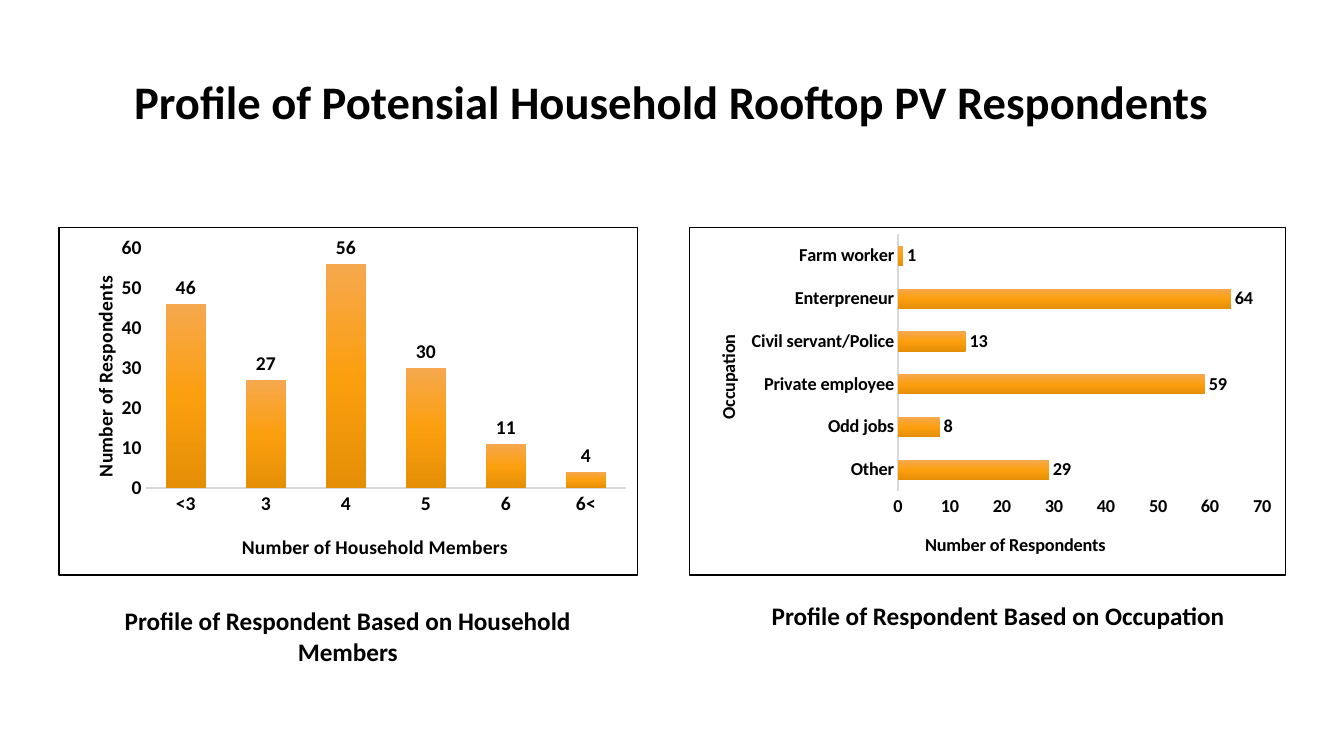
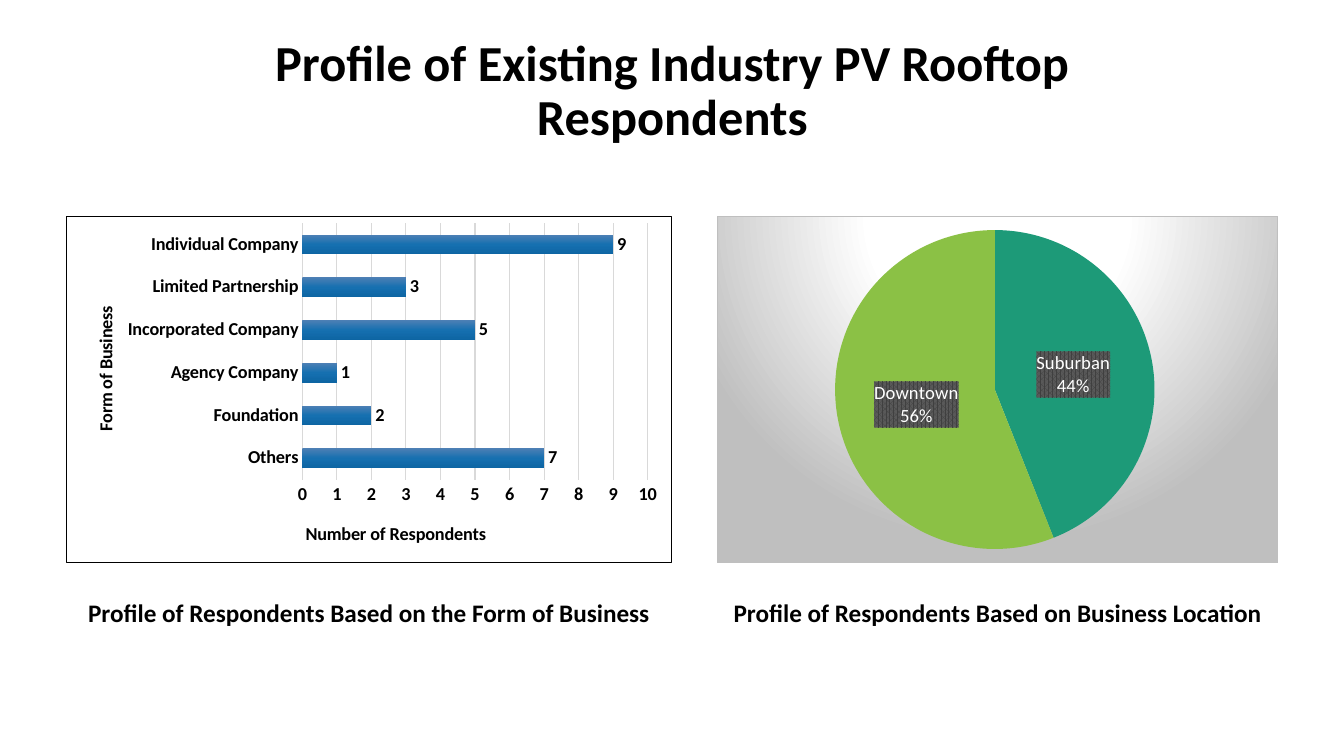
from pptx import Presentation
from pptx.chart.data import CategoryChartData
from pptx.dml.color import RGBColor
from pptx.enum.chart import XL_CHART_TYPE, XL_LABEL_POSITION, XL_TICK_MARK
from pptx.enum.text import MSO_ANCHOR, MSO_AUTO_SIZE, PP_ALIGN
from pptx.oxml import parse_xml
from pptx.oxml.ns import nsdecls, qn
from pptx.util import Inches, Pt

COLUMN, BAR, PIE = (XL_CHART_TYPE.COLUMN_CLUSTERED,
                    XL_CHART_TYPE.BAR_CLUSTERED, XL_CHART_TYPE.PIE)
OUTSIDE, MIDDLE = XL_LABEL_POSITION.OUTSIDE_END, XL_LABEL_POSITION.CENTER
NO_TICK = XL_TICK_MARK.NONE
LEFT, CENTER = PP_ALIGN.LEFT, PP_ALIGN.CENTER
ANCHOR_MIDDLE, NO_AUTOFIT = MSO_ANCHOR.MIDDLE, MSO_AUTO_SIZE.NONE

FONT = "Calibri"
BLACK = RGBColor(0x00, 0x00, 0x00)
WHITE = RGBColor(0xFF, 0xFF, 0xFF)
RULE_GRAY = RGBColor(0xD9, 0xD9, 0xD9)
FRAME_GRAY = RGBColor(0xBF, 0xBF, 0xBF)
LABEL_DARK = RGBColor(0x40, 0x40, 0x40)
LABEL_LIGHT = RGBColor(0x59, 0x59, 0x59)
TEAL = RGBColor(0x1D, 0x9A, 0x78)
GREEN = RGBColor(0x8B, 0xC1, 0x45)
ORANGES = [(0, RGBColor(0xF5, 0xA8, 0x4E)), (50, RGBColor(0xFC, 0x9F, 0x0E)),
           (100, RGBColor(0xE5, 0x8F, 0x07))]
BLUES = [(0, RGBColor(0x4E, 0x80, 0xB5)), (50, RGBColor(0x16, 0x70, 0xB0)),
         (100, RGBColor(0x0D, 0x65, 0xA3))]
SPOTLIGHT = [(0, WHITE), (39, WHITE), (100, FRAME_GRAY)]

DOWNWARD = '<a:lin ang="5400000" scaled="0"/>'
RADIAL = ('<a:path path="circle"><a:fillToRect l="50000" t="-80000" '
          'r="50000" b="180000"/></a:path>')


def set_values(target, **values):
    for name, value in values.items():
        setattr(target, name, value)


def style_font(font, size, color=BLACK, bold=True):
    set_values(font, name=FONT, size=Pt(size), bold=bold)
    font.color.rgb = color


def gradient_xml(stops, direction):
    marks = "".join(f'<a:gs pos="{pos * 1000}"><a:srgbClr val="{color}"/></a:gs>'
                    for pos, color in stops)
    return (f'<a:gradFill {nsdecls("a")} rotWithShape="1">'
            f'<a:gsLst>{marks}</a:gsLst>{direction}</a:gradFill>')


def shape_properties(content):
    return parse_xml(f'<c:spPr {nsdecls("c", "a")}>{content}</c:spPr>')


def place(parent, x, y, width=None, height=None):
    """Place a plot area or an axis title by fractions of the chart."""
    old = parent.find(qn("c:layout"))
    if old is not None:
        parent.remove(old)
    target = '<c:layoutTarget val="inner"/>' if width else ""
    parts = {"xMode": "edge", "yMode": "edge", "x": x, "y": y, "w": width, "h": height}
    tags = "".join(f'<c:{tag} val="{value}"/>'
                   for tag, value in parts.items() if value is not None)
    layout = parse_xml(f'<c:layout {nsdecls("c")}><c:manualLayout>{target}{tags}'
                       '</c:manualLayout></c:layout>')
    words = parent.find(qn("c:tx"))
    if words is None:
        parent.insert(0, layout)
    else:
        words.addnext(layout)


class ProfileDeck:
    """Holds the shared style and the current slide."""

    def __init__(self):
        self.deck = Presentation()
        set_values(self.deck, slide_width=Inches(13.33), slide_height=Inches(7.5))
        self.page = None

    def put_text(self, frame, text, size, align):
        frame.text = text
        para = frame.paragraphs[0]
        para.alignment = align
        style_font(para.runs[0].font, size)
        return para

    def add_page(self, title, top, size, align):
        self.page = self.deck.slides.add_slide(self.deck.slide_layouts[5])
        box = self.page.shapes.title
        set_values(box, left=Inches(1.23), top=Inches(top),
                   width=Inches(10.88), height=Inches(0.97))
        set_values(box.text_frame, word_wrap=True, auto_size=NO_AUTOFIT,
                   vertical_anchor=ANCHOR_MIDDLE)
        self.put_text(box.text_frame, title, size, align).line_spacing = 0.9

    def add_caption(self, text, *bounds):
        box = self.page.shapes.add_textbox(*map(Inches, bounds))
        box.text_frame.word_wrap = True
        self.put_text(box.text_frame, text, 18, CENTER)

    def add_chart(self, kind, bounds, points, size, plot, border, background=""):
        data = CategoryChartData()
        data.categories = list(points)
        data.add_series("Respondents", list(points.values()))
        chart = self.page.shapes.add_chart(kind, *map(Inches, bounds), data).chart
        set_values(chart, has_title=False, has_legend=False)
        style_font(chart.font, size)
        chart.plots[0].vary_by_categories = kind == PIE

        # Frame around the whole chart
        body = chart.element.find(qn("c:chart"))
        body.addnext(shape_properties(
            f'{background or "<a:noFill/>"}<a:ln w="9525"><a:solidFill>'
            f'<a:srgbClr val="{border}"/></a:solidFill></a:ln>'))
        if chart.element.find(qn("c:roundedCorners")) is None:
            body.addprevious(parse_xml(f'<c:roundedCorners {nsdecls("c")} val="0"/>'))
        place(body.find(qn("c:plotArea")), *plot)
        return chart

    def name_axis(self, axis, text, size, spot, upright):
        title = axis.axis_title
        self.put_text(title.text_frame, text, size, CENTER)
        body = next(title.element.iter(qn("a:bodyPr")))
        body.set("rot", "-5400000" if upright else "0")
        body.set("vert", "horz")
        place(title.element, *spot)

    def add_bars(self, kind, bounds, points, size, plot, category, value, scale,
                 colors, gap, overlap, grid=False):
        chart = self.add_chart(kind, bounds, points, size, plot, BLACK)
        bars = chart.plots[0]
        set_values(bars, gap_width=gap, overlap=overlap)
        bars.series[0].format.fill.background()
        fill = chart.element.find(f".//{qn('c:ser')}/{qn('c:spPr')}/{qn('a:noFill')}")
        fill.getparent().replace(fill, parse_xml(gradient_xml(colors, DOWNWARD)))

        # Value labels
        labels = bars.series[0].data_labels
        set_values(labels, show_value=True, position=OUTSIDE)
        style_font(labels.font, size)

        # Axes
        across, along = chart.category_axis, chart.value_axis
        for axis, (text, spot), upright in ((across, category, kind == BAR),
                                            (along, value, kind == COLUMN)):
            set_values(axis, major_tick_mark=NO_TICK, minor_tick_mark=NO_TICK,
                       has_major_gridlines=False)
            style_font(axis.tick_labels.font, size)
            self.name_axis(axis, text, size, spot, upright)
        across.format.line.color.rgb = RULE_GRAY
        across.format.line.width = Pt(1)
        along.format.line.fill.background()
        maximum, step = scale
        set_values(along, minimum_scale=0, maximum_scale=maximum, major_unit=step,
                   has_major_gridlines=grid)
        if grid:
            line = along.major_gridlines.format.line
            line.color.rgb = RULE_GRAY
            line.width = Pt(0.75)

    def add_pie(self, bounds, points, colors, plot):
        chart = self.add_chart(PIE, bounds, points, 10, plot, FRAME_GRAY,
                               gradient_xml(SPOTLIGHT, RADIAL))
        series = chart.plots[0].series[0]
        for index, color in enumerate(colors):
            fill = series.points[index].format.fill
            fill.solid()
            fill.fore_color.rgb = color

        # Name and share on a patterned plate
        labels = series.data_labels
        set_values(labels, show_value=False, show_category_name=True,
                   show_percentage=True, number_format="0%",
                   number_format_is_linked=False, position=MIDDLE)
        style_font(labels.font, 13.3, WHITE, False)
        holder = next(chart.element.iter(qn("c:dLbls")))
        holder.find(qn("c:txPr")).addprevious(shape_properties(
            '<a:pattFill prst="pct75">'
            f'<a:fgClr><a:srgbClr val="{LABEL_DARK}"/></a:fgClr>'
            f'<a:bgClr><a:srgbClr val="{LABEL_LIGHT}"/></a:bgClr></a:pattFill>'))
        holder.find(qn("c:showBubbleSize")).addnext(
            parse_xml(f'<c:separator {nsdecls("c")}>\n</c:separator>'))


def main():
    profile = ProfileDeck()
    respondents = "Number of Respondents"

    # Households
    profile.add_page("Profile of Potensial Household Rooftop PV Respondents",
                     0.55, 33.3, LEFT)
    profile.add_bars(
        COLUMN, (0.58, 2.25, 5.75, 3.46),
        {"<3": 46, "3": 27, "4": 56, "5": 30, "6": 11, "6<": 4},
        14, (0.15, 0.06, 0.83, 0.69),
        ("Number of Household Members", (0.31, 0.87)), (respondents, (0.05, 0.13)),
        (60, 10), ORANGES, 100, -24)
    profile.add_bars(
        BAR, (6.83, 2.25, 5.93, 3.46),
        {"Other": 29, "Odd jobs": 8, "Private employee": 59,
         "Civil servant/Police": 13, "Enterpreneur": 64, "Farm worker": 1},
        13, (0.35, 0.02, 0.61, 0.74),
        ("Occupation", (0.04, 0.3)), (respondents, (0.39, 0.87)),
        (70, 10), ORANGES, 115, -20)
    profile.add_caption("Profile of Respondent Based on Household Members",
                        0.98, 5.96, 4.94, 0.71)
    profile.add_caption("Profile of Respondent Based on Occupation",
                        7.36, 5.91, 5.08, 0.4)

    # Industry
    profile.add_page("Profile of Existing Industry PV Rooftop Respondents",
                     0.43, 36, CENTER)
    profile.add_bars(
        BAR, (0.65, 2.14, 6.02, 3.45),
        {"Others": 7, "Foundation": 2, "Agency Company": 1,
         "Incorporated Company": 5, "Limited Partnership": 3, "Individual Company": 9},
        13, (0.39, 0.02, 0.57, 0.74),
        ("Form of Business", (0.04, 0.25)), (respondents, (0.39, 0.87)),
        (10, 1), BLUES, 115, -20, grid=True)
    profile.add_pie((7.11, 2.14, 5.57, 3.45), {"Suburban": 44, "Downtown": 56},
                    (TEAL, GREEN), (0.21, 0.04, 0.57, 0.92))
    profile.add_caption("Profile of Respondents Based on the Form of Business",
                        0.65, 5.88, 6.02, 0.4)
    profile.add_caption("Profile of Respondents Based on Business Location",
                        7.11, 5.88, 5.57, 0.4)

    profile.deck.save("out.pptx")


if __name__ == "__main__":
    main()
